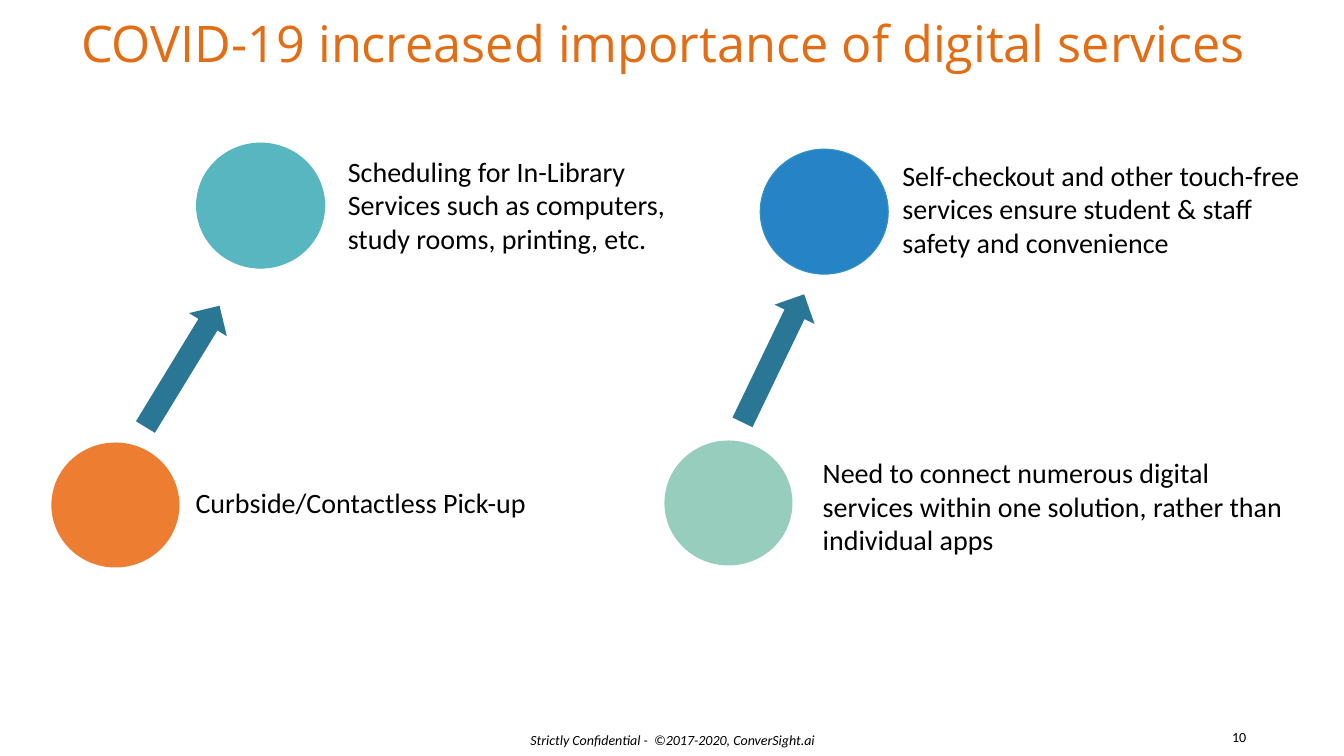
from dataclasses import dataclass

from pptx import Presentation
from pptx.dml.color import RGBColor
from pptx.enum.shapes import MSO_SHAPE
from pptx.enum.text import MSO_ANCHOR, MSO_AUTO_SIZE, PP_ALIGN
from pptx.util import Inches, Pt

TITLE = "COVID-19 increased importance of digital services"
FOOTER = "Strictly Confidential -  ©2017-2020, ConverSight.ai"
PAGE_NUMBER = "10"

# circle position, circle fill, circle outline, label box, label
SERVICES = [
    ((0.51, 4.39), "ED7D31", None, (1.81, 4.69, 4.6, 0.61),
     "Curbside/Contactless Pick-up"),
    ((1.95, 1.42), "58B6C0", "58B6C0", (3.32, 1.4, 3.47, 1.28),
     "Scheduling for In-Library Services such as computers, study rooms, printing, etc."),
    ((6.59, 4.37), "97CDBD", None, (8.03, 4.39, 4.84, 1.28),
     "Need to connect numerous digital services within one solution, rather than individual apps"),
    ((7.54, 1.48), "2683C6", "3494BA", (8.82, 1.44, 4.33, 1.28),
     "Self-checkout and other touch-free services ensure student & staff safety and convenience"),
]
# left, top, rotation
ARROWS = [(1.59, 2.93, 31.4), (7.45, 2.85, 25.7)]

CIRCLE_SIZE = (1.27, 1.24)
ARROW_SIZE = (0.44, 1.41)
TITLE_BOX = (0.37, 0.06, 12.42, 1.03)
FOOTER_BOX = (4.61, 7.21, 4.12, 0.25)
PAGE_NUMBER_BOX = (12.23, 7.18, 0.18, 0.25)


@dataclass(frozen=True)
class Theme:
    title_font: str = "Open Sans"
    body_font: str = "Calibri"
    title_color: str = "E26D14"
    text_color: str = "000000"
    arrow_color: str = "2A7695"
    title_size: int = 36
    label_size: int = 20
    footer_size: int = 10
    wide_inset: float = 0.13
    narrow_inset: float = 0.05


THEME = Theme()


def inches(values):
    return [Inches(value) for value in values]


def fill_text(text_frame, text, font_name, size, color, inset):
    """Write one paragraph with even insets and return it."""
    text_frame.auto_size = MSO_AUTO_SIZE.NONE
    text_frame.margin_left = text_frame.margin_right = Inches(inset)
    text_frame.margin_top = text_frame.margin_bottom = Inches(inset)
    text_frame.text = text
    paragraph = text_frame.paragraphs[0]
    font = paragraph.runs[0].font
    font.name = font_name
    font.size = Pt(size)
    font.color.rgb = RGBColor.from_string(color)
    return paragraph


def add_title(slide):
    title = slide.shapes.title
    title.left, title.top, title.width, title.height = inches(TITLE_BOX)
    paragraph = fill_text(title.text_frame, TITLE, THEME.title_font,
                          THEME.title_size, THEME.title_color, THEME.wide_inset)
    title.text_frame.vertical_anchor = MSO_ANCHOR.TOP
    paragraph.alignment = PP_ALIGN.CENTER
    paragraph.line_spacing = 0.9


def add_text(slide, box, text, size, inset, wrap=True):
    text_frame = slide.shapes.add_textbox(*inches(box)).text_frame
    text_frame.word_wrap = wrap
    return fill_text(text_frame, text, THEME.body_font, size,
                     THEME.text_color, inset)


def add_footer_text(slide, box, text, alignment, wrap=True, italic=False):
    paragraph = add_text(slide, box, text, THEME.footer_size,
                         THEME.narrow_inset, wrap)
    paragraph.alignment = alignment
    paragraph.runs[0].font.italic = italic


def add_solid_shape(slide, preset, box, fill, outline=None):
    shape = slide.shapes.add_shape(preset, *inches(box))
    shape.shadow.inherit = False
    shape.fill.solid()
    shape.fill.fore_color.rgb = RGBColor.from_string(fill)
    if outline:
        shape.line.color.rgb = RGBColor.from_string(outline)
        shape.line.width = Pt(0.75)
    else:
        shape.line.fill.background()
    return shape


def main():
    presentation = Presentation()
    presentation.slide_width = Inches(13.33)
    presentation.slide_height = Inches(7.5)
    slide = presentation.slides.add_slide(presentation.slide_layouts[5])

    add_title(slide)
    for position, fill, outline, label_box, label in SERVICES:
        add_solid_shape(slide, MSO_SHAPE.OVAL, position + CIRCLE_SIZE, fill, outline)
        add_text(slide, label_box, label, THEME.label_size, THEME.wide_inset)
    for left, top, rotation in ARROWS:
        arrow = add_solid_shape(slide, MSO_SHAPE.UP_ARROW,
                                (left, top) + ARROW_SIZE, THEME.arrow_color)
        arrow.rotation = rotation
    add_footer_text(slide, FOOTER_BOX, FOOTER, PP_ALIGN.CENTER, italic=True)
    add_footer_text(slide, PAGE_NUMBER_BOX, PAGE_NUMBER, PP_ALIGN.RIGHT, wrap=False)

    presentation.save("out.pptx")


if __name__ == "__main__":
    main()
